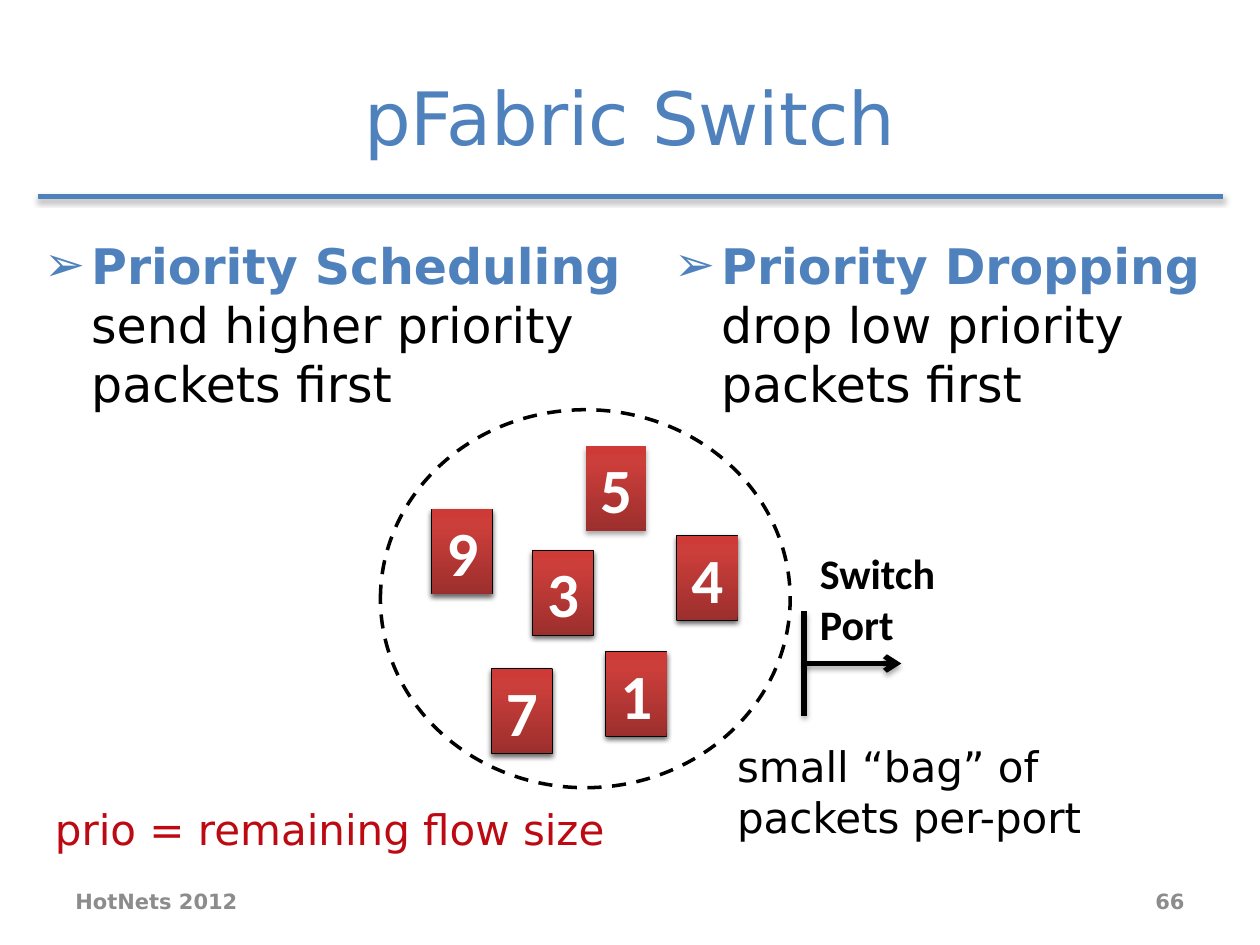
from lxml.etree import SubElement
from pptx import Presentation
from pptx.dml.color import RGBColor
from pptx.enum.dml import MSO_LINE
from pptx.enum.shapes import MSO_CONNECTOR, MSO_SHAPE
from pptx.enum.text import MSO_ANCHOR, PP_ALIGN
from pptx.oxml.ns import qn
from pptx.util import Cm, Pt

COLORS = {
    "accent": "4F81BD", "text": "000000", "paper": "FFFFFF",
    "muted": "8C8C8C", "note": "BD0A12",
}
RED_STOPS = [(0, "9C2F2D"), (80, "CB3E3A"), (100, "CE3B37")]
GREY_STOPS = [(0, "BDBDBD"), (35, "D1D1D1"), (100, "EEEEEE")]
SANS = "DejaVu Sans"
CARD_SIZE = (1.22, 1.7)
# Priority, left and top within the bag, and whether a backing card frames it
PACKETS = [
    ("7", 2.24, 5.23, True), ("1", 4.55, 4.88, True), ("9", 1.04, 2.01, True),
    ("4", 5.98, 2.54, True), ("3", 3.07, 2.84, True), ("5", 4.14, 0.74, False),
]


def color(name):
    return RGBColor.from_string(COLORS[name])


def add_run(paragraph, text, size, color_name, font=SANS, bold=False):
    run = paragraph.add_run()
    run.text = text
    run.font.size = Pt(size)
    run.font.name = font
    run.font.bold = bold
    run.font.color.rgb = color(color_name)


def add_text(slide, box, runs, align=PP_ALIGN.LEFT, anchor=MSO_ANCHOR.TOP, space=0):
    """Add a wrapped one-paragraph text box and return its paragraph."""
    frame = slide.shapes.add_textbox(*map(Cm, box)).text_frame
    frame.word_wrap = True
    frame.vertical_anchor = anchor
    paragraph = frame.paragraphs[0]
    paragraph.alignment = align
    paragraph.space_before = Pt(space)
    for run in runs:
        add_run(paragraph, *run)
    return paragraph


def add_shadow(shape, alpha=35, distance=1.8):
    """Add a soft downward shadow; fill and line must be set before."""
    properties = shape._element.spPr
    effects = properties.find(qn("a:effectLst"))
    if effects is None:
        effects = SubElement(properties, qn("a:effectLst"))
    shadow = SubElement(effects, qn("a:outerShdw"), blurRad=str(Pt(3.1)),
                        dist=str(Pt(distance)), dir="5400000", rotWithShape="0")
    shade = SubElement(shadow, qn("a:srgbClr"), val=COLORS["text"])
    SubElement(shade, qn("a:alpha"), val=str(alpha * 1000))


def add_line(slide, start, end, color_name, arrow=False):
    line = slide.shapes.add_connector(
        MSO_CONNECTOR.STRAIGHT, *map(Cm, start + end))
    line.line.color.rgb = color(color_name)
    line.line.width = Pt(3)
    if arrow:
        SubElement(line.line._get_or_add_ln(), qn("a:tailEnd"), type="arrow")
    add_shadow(line)


def add_card(slide, left, top, stops):
    """Add a packet card filled with a gradient that rises from the bottom."""
    card = slide.shapes.add_shape(
        MSO_SHAPE.RECTANGLE, *map(Cm, (left, top) + CARD_SIZE))
    card.fill.gradient()
    card.fill.gradient_angle = 90
    stop_list = card._element.spPr.find(".//" + qn("a:gsLst"))
    for old_stop in list(stop_list):
        stop_list.remove(old_stop)
    for position, value in stops:
        stop = SubElement(stop_list, qn("a:gs"), pos=str(position * 1000))
        SubElement(stop, qn("a:srgbClr"), val=value)
    card.shadow.inherit = False
    return card


def add_header(slide, box):
    left, top, width, height = box
    title = slide.shapes.title
    title.left, title.top, title.width, title.height = map(Cm, box)
    title.text_frame.vertical_anchor = MSO_ANCHOR.MIDDLE
    paragraph = title.text_frame.paragraphs[0]
    paragraph.alignment = PP_ALIGN.CENTER
    add_run(paragraph, "pFabric Switch", 42, "accent")
    # Rule under the title
    rule_top = top + height + 0.02
    add_line(slide, (left + 0.76, rule_top), (left + width - 0.74, rule_top), "accent")


def add_bullet(slide, box, heading, detail):
    runs = [(heading + " ", 28, "accent", SANS, True), (detail, 28, "text")]
    properties = add_text(slide, box, runs)._p.get_or_add_pPr()
    properties.set("marL", str(Cm(0.95)))
    properties.set("indent", str(-Cm(0.95)))
    bullet_color = SubElement(properties, qn("a:buClr"))
    SubElement(bullet_color, qn("a:srgbClr"), val=COLORS["accent"])
    SubElement(properties, qn("a:buFont"), typeface=SANS)
    SubElement(properties, qn("a:buChar"), char="➢")


def add_packet_bag(slide, box):
    left, top, width, height = box
    bag = slide.shapes.add_shape(MSO_SHAPE.OVAL, *map(Cm, box))
    bag.fill.solid()
    bag.fill.fore_color.rgb = color("paper")
    bag.line.color.rgb = color("text")
    bag.line.width = Pt(2)
    bag.line.dash_style = MSO_LINE.DASH
    bag.shadow.inherit = False

    for priority, across, down, framed in PACKETS:
        # Backing card with a thin outline
        if framed:
            backing = add_card(slide, left + across, top + down, GREY_STOPS)
            backing.line.color.rgb = color("text")
            backing.line.width = Pt(0.75)
            add_shadow(backing, 38, 1.6)
        # Numbered packet
        packet = add_card(slide, left + across, top + down, RED_STOPS)
        packet.line.fill.background()
        add_shadow(packet)
        frame = packet.text_frame
        frame.margin_left = frame.margin_right = 0
        frame.vertical_anchor = MSO_ANCHOR.MIDDLE
        paragraph = frame.paragraphs[0]
        paragraph.alignment = PP_ALIGN.CENTER
        add_run(paragraph, priority, 36, "paper", "Calibri", True)


def add_switch_port(slide, box):
    left, top, width, height = box
    middle = top + height / 2
    add_text(slide, (left + 0.07, top - 1.4, 2.95, 2.31),
             [("Switch Port", 24, "text", "Calibri", True)])
    add_line(slide, (left, top), (left, top + height), "text")
    add_line(slide, (left, middle), (left + width, middle), "text", arrow=True)


def add_footer(slide, box):
    left, top, width, height = box
    cell = 5.92
    for offset, text, align in ((0, "HotNets 2012", PP_ALIGN.LEFT),
                                (width - cell, "66", PP_ALIGN.RIGHT)):
        add_text(slide, (left + offset, top, cell, height),
                 [(text, 12, "muted", SANS, True)], align, MSO_ANCHOR.MIDDLE)


def main():
    presentation = Presentation()
    presentation.slide_width, presentation.slide_height = Cm(25.4), Cm(19.05)
    slide = presentation.slides.add_slide(presentation.slide_layouts[5])

    add_header(slide, (0, 0.76, 25.4, 3.18))
    add_packet_bag(slide, (7.67, 8.26, 8.26, 7.62))
    add_switch_port(slide, (16.21, 12.32, 1.96, 2.11))
    add_bullet(slide, (0.64, 4.62, 12.7, 3.84),
               "Priority Scheduling", "send higher priority packets first")
    add_bullet(slide, (13.34, 4.62, 11.23, 3.84),
               "Priority Dropping", "drop low priority packets first")
    # Captions
    add_text(slide, (14.61, 14.81, 8.26, 2.34),
             [("small “bag” of packets per-port", 24, "text")], space=3)
    add_text(slide, (0.2, 16.08, 12.9, 1.47),
             [("prio = remaining flow size", 24, "note")], PP_ALIGN.CENTER, space=3)
    add_footer(slide, (1.27, 17.65, 22.86, 1.02))

    presentation.save("out.pptx")


if __name__ == "__main__":
    main()
